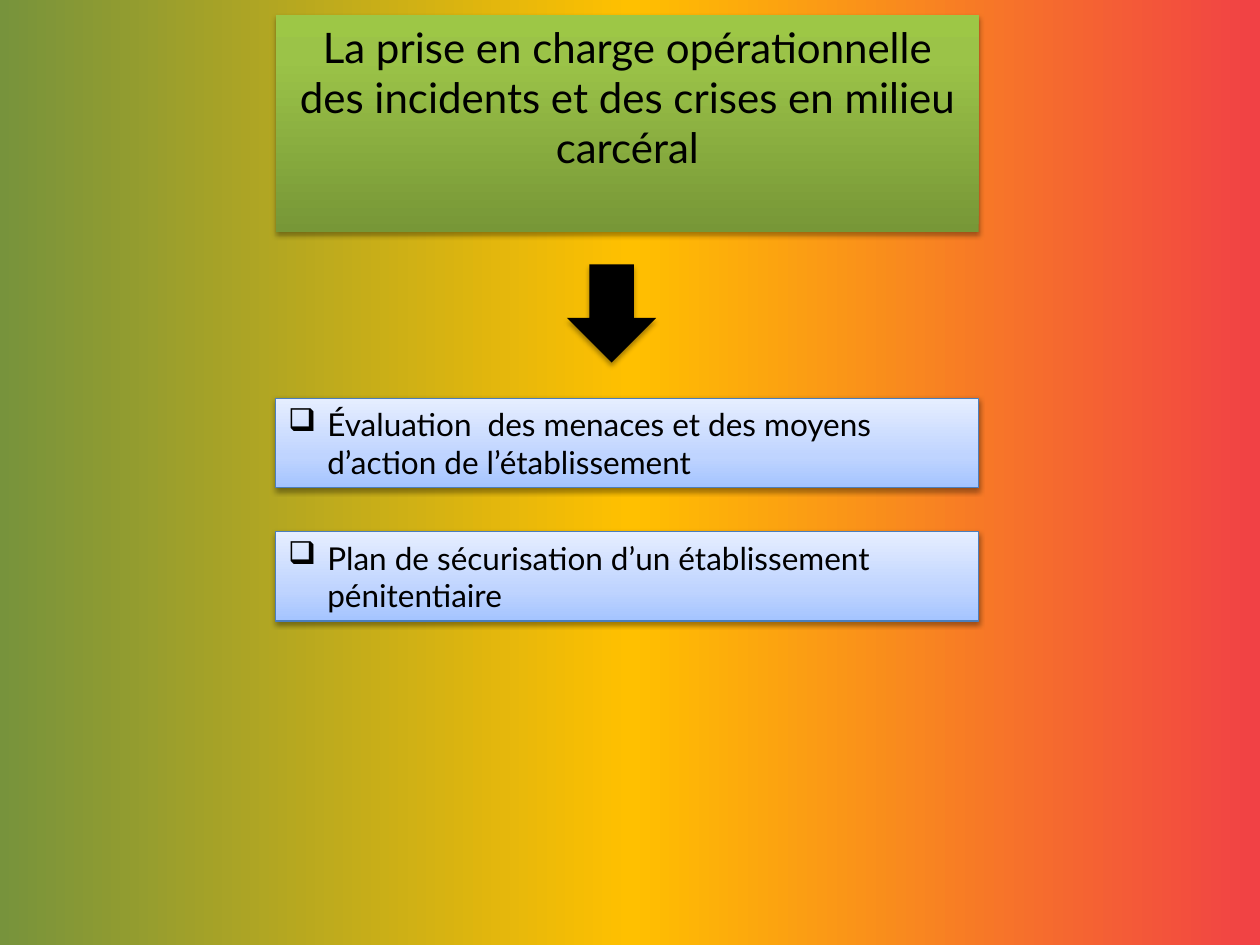
"""Build the slide on handling incidents and crises in prison."""
from copy import deepcopy

from lxml import etree
from pptx import Presentation
from pptx.dml.color import RGBColor
from pptx.enum.shapes import MSO_SHAPE
from pptx.enum.text import MSO_ANCHOR, MSO_AUTO_SIZE, PP_ALIGN
from pptx.oxml import parse_xml
from pptx.oxml.ns import nsdecls, qn
from pptx.util import Cm, Pt

RECT, ARROW = MSO_SHAPE.RECTANGLE, MSO_SHAPE.DOWN_ARROW
TOP, MIDDLE = MSO_ANCHOR.TOP, MSO_ANCHOR.MIDDLE
LEFT, CENTER = PP_ALIGN.LEFT, PP_ALIGN.CENTER
FIXED = MSO_AUTO_SIZE.NONE

BLACK = RGBColor(0x00, 0x00, 0x00)
EDGE = RGBColor(0x4B, 0x7E, 0xBC)
BACK = [(0, RGBColor(0x77, 0x93, 0x3C)), (0.5, RGBColor(0xFF, 0xC0, 0x00)),
        (1, RGBColor(0xF1, 0x41, 0x45))]
GREEN = [(0, RGBColor(0x77, 0x97, 0x37)), (0.8, RGBColor(0x9B, 0xC3, 0x48)),
         (1, RGBColor(0x9D, 0xC7, 0x46))]
BLUE = [(0, RGBColor(0xA4, 0xC4, 0xFF)), (0.35, RGBColor(0xBF, 0xD4, 0xFF)),
        (1, RGBColor(0xE6, 0xEE, 0xFF))]

EDGE_X, WIDTH = 5.56, 14.17
ROW_TOP, ROW_STEP, ROW_TALL = 8.03, 2.69, 1.8
TITLE = ("La prise en charge opérationnelle des incidents "
         "et des crises en milieu carcéral")
ROWS = ["Évaluation  des menaces et des moyens d’action de l’établissement",
        "Plan de sécurisation d’un établissement pénitentiaire"]


class Deck:
    """Hold the style and the current slide."""

    def __init__(self, font):
        self.font = font
        self.file = Presentation()
        self.file.slide_width, self.file.slide_height = Cm(25.4), Cm(19.05)
        self.slide = self.file.slides.add_slide(self.file.slide_layouts[5])

    def blend(self, fill, root, stops, angle):
        """Fill with a gradient of three stops."""
        fill.gradient()
        fill.gradient_angle = angle
        group = next(root.iter(qn("a:gsLst")))
        group.append(deepcopy(group[-1]))
        for stop, (place, color) in zip(fill.gradient_stops, stops):
            stop.position = place
            stop.color.rgb = color

    def ground(self, stops):
        """Paint the background."""
        self.blend(self.slide.background.fill, self.slide.element, stops, 0)

    def shade(self, shape, alpha, drop):
        """Cast a soft shadow downwards."""
        shape.shadow.inherit = False
        effect = shape.element.spPr.find(qn("a:effectLst"))
        effect.append(parse_xml(
            f'<a:outerShdw {nsdecls("a")} blurRad="{Pt(3.1)}" '
            f'dist="{Pt(drop)}" dir="5400000" rotWithShape="0">'
            f'<a:srgbClr val="000000"><a:alpha val="{alpha}000"/>'
            '</a:srgbClr></a:outerShdw>'))

    def label(self, shape, text, size, align, anchor):
        """Set the text of a shape and return its paragraph."""
        frame = shape.text_frame
        frame.text = text
        frame.word_wrap = True
        frame.auto_size = FIXED
        frame.vertical_anchor = anchor
        para = frame.paragraphs[0]
        para.alignment = align
        para.font.name, para.font.size = self.font, Pt(size)
        para.font.color.rgb = BLACK
        return para

    def title(self, text, top, tall):
        """Place and format the title."""
        shape = self.slide.shapes.title
        shape.left, shape.top = Cm(EDGE_X), Cm(top)
        shape.width, shape.height = Cm(WIDTH), Cm(tall)
        self.blend(shape.fill, shape.element, GREEN, 90)
        self.shade(shape, 35, 1.8)
        self.label(shape, text, 24, CENTER, TOP)

    def arrow(self, left, top, width, tall):
        """Add a black arrow that points down."""
        shape = self.slide.shapes.add_shape(
            ARROW, Cm(left), Cm(top), Cm(width), Cm(tall))
        shape.fill.solid()
        shape.fill.fore_color.rgb = BLACK
        shape.line.fill.background()
        self.shade(shape, 35, 1.8)

    def row(self, text, top):
        """Add a blue box with one bulleted line."""
        shape = self.slide.shapes.add_shape(
            RECT, Cm(EDGE_X), Cm(top), Cm(WIDTH), Cm(ROW_TALL))
        self.blend(shape.fill, shape.element, BLUE, 90)
        shape.line.color.rgb = EDGE
        shape.line.width = Pt(0.75)
        self.shade(shape, 38, 1.6)
        para = self.label(shape, text, 18, LEFT, MIDDLE)
        props = para._p.get_or_add_pPr()
        props.set("marL", str(Cm(0.79)))
        props.set("indent", str(-Cm(0.79)))
        mark = etree.Element(qn("a:buChar"), char="❑")
        props.insert(0, mark)


def main():
    """Build and save the slide."""
    deck = Deck("Lato")
    deck.ground(BACK)
    deck.title(TITLE, 0.3, 4.37)
    deck.arrow(11.43, 5.33, 1.8, 1.98)
    for index, text in enumerate(ROWS):
        deck.row(text, ROW_TOP + index * ROW_STEP)
    deck.file.save("out.pptx")


if __name__ == "__main__":
    main()
